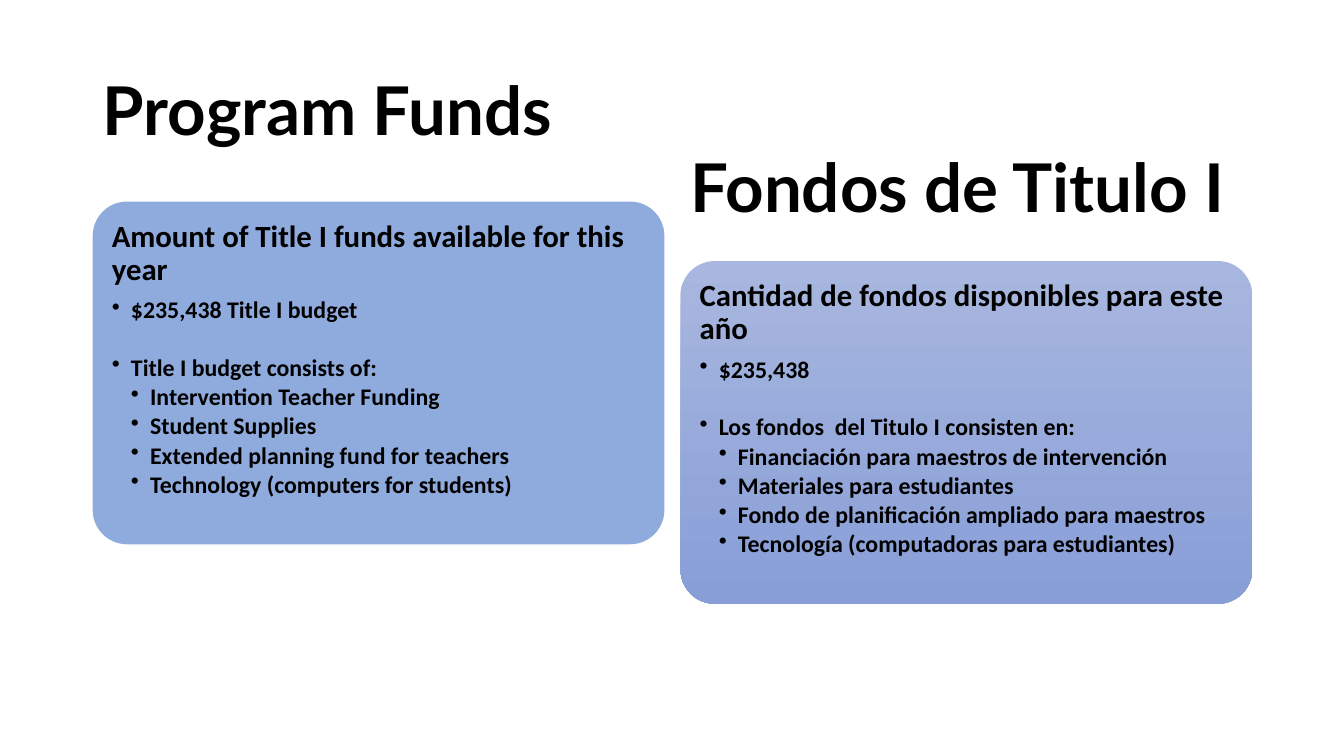
"""Build a bilingual slide on the Title I program funds."""
from pptx import Presentation
from pptx.dml.color import RGBColor
from pptx.enum.shapes import MSO_SHAPE as Shape
from pptx.enum.text import MSO_ANCHOR as Anchor, PP_ALIGN as Align
from pptx.util import Inches, Pt
from lxml.etree import SubElement
from pptx.oxml.ns import qn

INK = "000000"
CARD_SIZE = (5.67, 3.4)
INDENT = 0.19
TITLES = [
    ("Program Funds", (0.92, 0.4, 5.75, 1.45), Anchor.MIDDLE, 0.9),
    ("Fondos de Titulo I", (6.75, 1.39, 6.5, 0.91), Anchor.TOP, 1.0),
]
CARDS = [
    {
        "at": (0.92, 2.0),
        "colors": ["8FAADC"],
        "heading": "Amount of Title I funds available for this year",
        "amount": "$235,438 Title I budget",
        "intro": "Title I budget consists of:",
        "uses": [
            "Intervention Teacher Funding",
            "Student Supplies",
            "Extended planning fund for teachers",
            "Technology (computers for students)",
        ],
    },
    {
        "at": (6.75, 2.59),
        "colors": ["A8B7DF", "889ED7"],
        "heading": "Cantidad de fondos disponibles para este año",
        "amount": "$235,438",
        "intro": "Los fondos  del Titulo I consisten en:",
        "uses": [
            "Financiación para maestros de intervención",
            "Materiales para estudiantes",
            "Fondo de planificación ampliado para maestros",
            "Tecnología (computadoras para estudiantes)",
        ],
    },
]


def color(code):
    return RGBColor.from_string(code)


def write(para, text, size=17, font="Calibri", spacing=0.9, after=2.5, level=0):
    para.alignment = Align.LEFT
    para.line_spacing = spacing
    para.space_after = Pt(after)
    if level:
        para.level = level
        props = para._p.get_or_add_pPr()
        props.set("marL", str(Inches(INDENT * level)))
        props.set("indent", str(-Inches(INDENT)))
        SubElement(props, qn("a:buChar")).set("char", "•")
    span = para.add_run()
    span.text = text
    span.font.name = font
    span.font.size = Pt(size)
    span.font.bold = True
    span.font.color.rgb = color(INK)


def add_title(page, text, place, anchor, spacing):
    box = page.shapes.add_textbox(*map(Inches, place))
    frame = box.text_frame
    frame.word_wrap = True
    frame.vertical_anchor = anchor
    write(frame.paragraphs[0], text, size=48, font="Lato", spacing=spacing, after=0)


def paint(fill, colors):
    if len(colors) == 1:
        fill.solid()
        fill.fore_color.rgb = color(colors[0])
        return
    fill.gradient()
    fill.gradient_angle = 270
    for stop, code in zip(fill.gradient_stops, colors):
        stop.color.rgb = color(code)


def add_card(page, card):
    box = page.shapes.add_shape(Shape.ROUNDED_RECTANGLE, *map(Inches, card["at"] + CARD_SIZE))
    box.adjustments[0] = 0.1
    box.shadow.inherit = False
    box.line.fill.background()
    paint(box.fill, card["colors"])
    frame = box.text_frame
    frame.word_wrap = True
    frame.vertical_anchor = Anchor.TOP
    frame.margin_left = frame.margin_right = Inches(0.09)
    frame.margin_top = frame.margin_bottom = Inches(0.09)
    write(frame.paragraphs[0], card["heading"], size=22, after=7.7)
    write(frame.add_paragraph(), card["amount"], level=1, after=23)
    write(frame.add_paragraph(), card["intro"], level=1)
    for use in card["uses"]:
        write(frame.add_paragraph(), use, level=2)


def main():
    deck = Presentation()
    deck.slide_width, deck.slide_height = Inches(13.33), Inches(7.5)
    page = deck.slides.add_slide(deck.slide_layouts[6])
    for card in CARDS:
        add_card(page, card)
    for title in TITLES:
        add_title(page, *title)
    deck.save("out.pptx")


if __name__ == "__main__":
    main()
